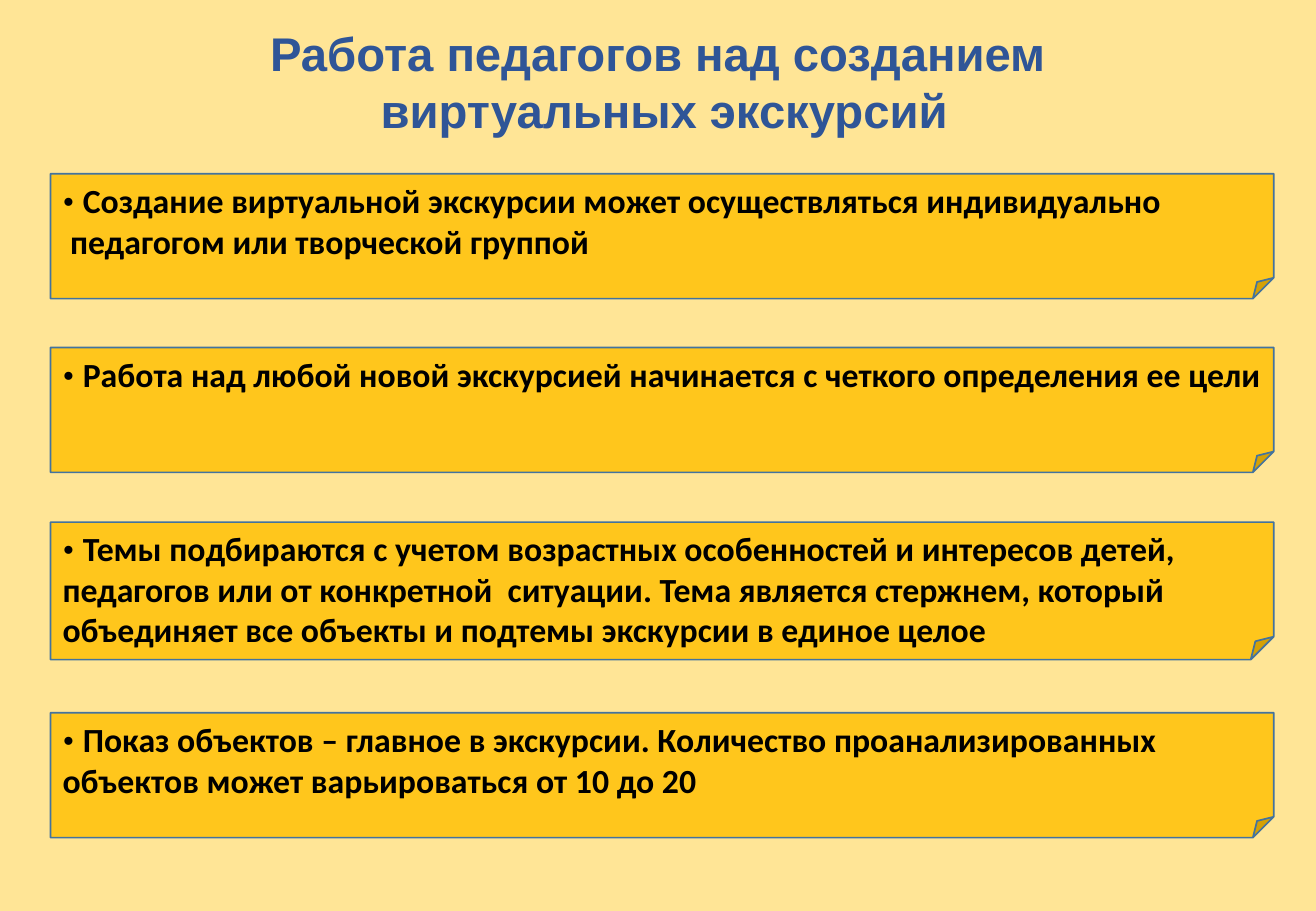
import pptx
import pptx.util
import pptx.dml.color
import pptx.enum.shapes
import pptx.enum.text
import pptx.oxml.ns
import lxml.etree

Pt = pptx.util.Pt
RGBColor = pptx.dml.color.RGBColor

CREAM = RGBColor(0xFF, 0xE5, 0x96)
AMBER = RGBColor(0xFF, 0xC0, 0x00)
STEEL = RGBColor(0x43, 0x73, 0x9E)
NAVY = RGBColor(0x2F, 0x55, 0x97)
BLACK = RGBColor(0x00, 0x00, 0x00)

TITLE = ["Работа педагогов над созданием", " виртуальных экскурсий"]

# Top and height of each note, then its lines
NOTES = [
    (103, 74, ["Создание виртуальной экскурсии может осуществляться индивидуально",
               " педагогом или творческой группой"]),
    (206, 74, ["Работа над любой новой экскурсией начинается с четкого определения ее цели"]),
    (309.5, 81.5, ["Темы подбираются с учетом возрастных особенностей и интересов детей, "
                   "педагогов или от конкретной  ситуации. Тема является стержнем, который "
                   "объединяет все объекты и подтемы экскурсии в единое целое"]),
    (422.5, 74, ["Показ объектов – главное в экскурсии. Количество проанализированных "
                 "объектов может варьироваться от 10 до 20"]),
]


def add_run(p, text, font, size, color, bold):
    r = p.add_run()
    r.text = text
    r.font.name = font
    r.font.size = Pt(size)
    r.font.bold = bold
    r.font.color.rgb = color


def set_opacity(sp, percent):
    color = sp.fill._xPr.find(".//" + pptx.oxml.ns.qn("a:srgbClr"))
    alpha = lxml.etree.SubElement(color, pptx.oxml.ns.qn("a:alpha"))
    alpha.set("val", str(percent * 1000))


def add_title(s, left, top, width, height):
    sp = s.shapes.add_textbox(Pt(left), Pt(top), Pt(width), Pt(height))
    tf = sp.text_frame
    tf.word_wrap = False
    for i, line in enumerate(TITLE):
        p = tf.paragraphs[0] if i == 0 else tf.add_paragraph()
        p.alignment = pptx.enum.text.PP_ALIGN.CENTER
        add_run(p, line, "Arial", 28, NAVY, True)


def add_note(s, left, top, width, height, lines):
    # Folded sheet
    sp = s.shapes.add_shape(pptx.enum.shapes.MSO_SHAPE.FOLDED_CORNER,
                            Pt(left), Pt(top), Pt(width), Pt(height))
    sp.shadow.inherit = False
    sp.fill.solid()
    sp.fill.fore_color.rgb = AMBER
    set_opacity(sp, 81)
    sp.line.color.rgb = STEEL
    sp.line.width = Pt(1)

    # Bulleted text
    tf = sp.text_frame
    tf.word_wrap = True
    tf.vertical_anchor = pptx.enum.text.MSO_ANCHOR.TOP
    p = tf.paragraphs[0]
    p.alignment = pptx.enum.text.PP_ALIGN.LEFT
    add_run(p, "• ", "Times New Roman", 20, BLACK, False)
    for i, line in enumerate(lines):
        if i:
            p.add_line_break()
        add_run(p, line, "Calibri", 20, BLACK, True)


def build_slide(prs):
    s = prs.slides.add_slide(prs.slide_layouts[6])
    s.background.fill.solid()
    s.background.fill.fore_color.rgb = CREAM
    add_title(s, 151.5, 11, 476.5, 74)
    for top, height, lines in NOTES:
        add_note(s, 30, top, 725, height, lines)


def main():
    prs = pptx.Presentation()
    prs.slide_width = Pt(780)
    prs.slide_height = Pt(540)
    build_slide(prs)
    prs.save("out.pptx")


if __name__ == "__main__":
    main()
